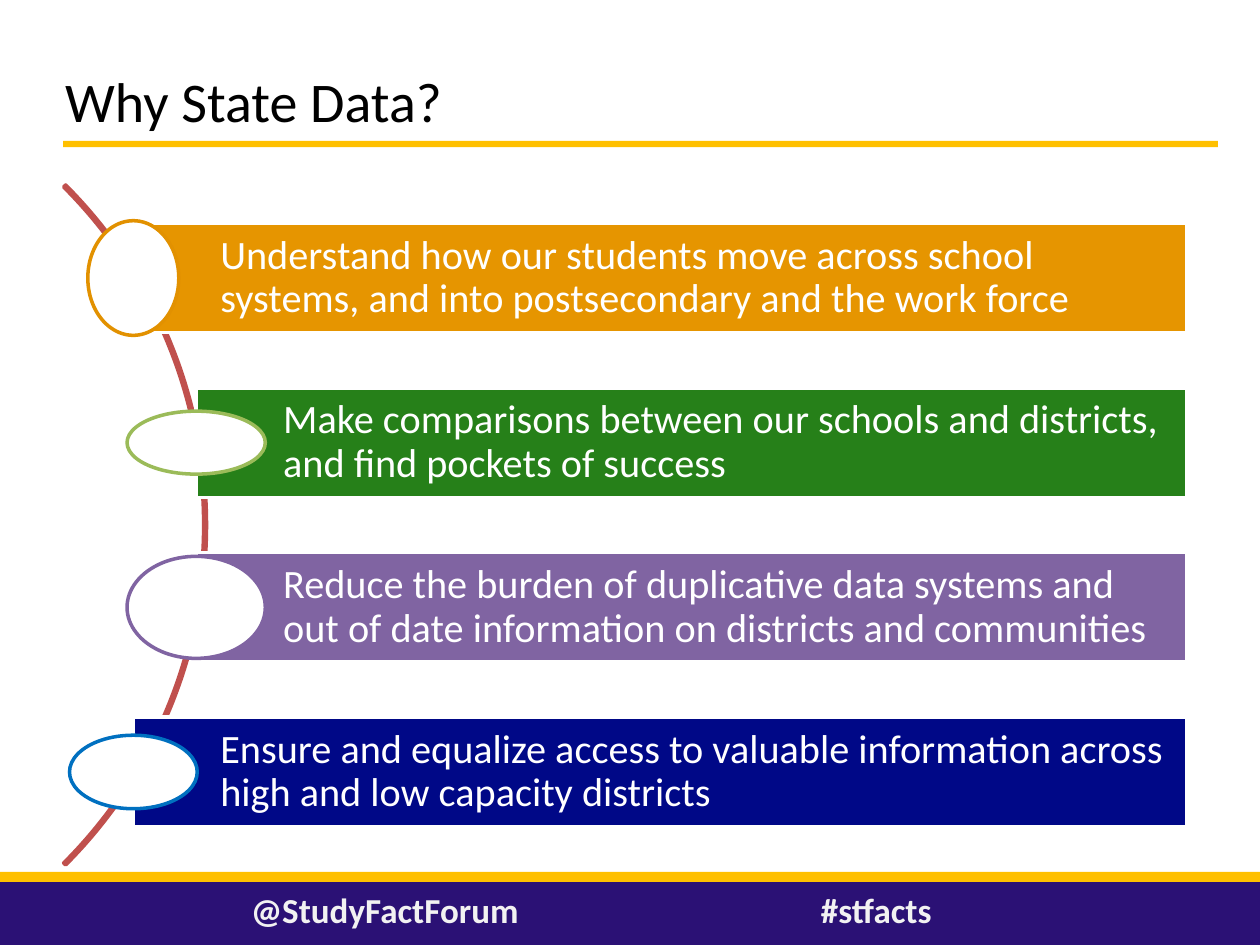
import pptx
import pptx.util
import pptx.dml.color
import pptx.enum.shapes
import pptx.enum.text

Pt = pptx.util.Pt
SHAPES = pptx.enum.shapes.MSO_SHAPE
ANCHOR = pptx.enum.text.MSO_ANCHOR
ALIGN = pptx.enum.text.PP_ALIGN
AUTO_SIZE = pptx.enum.text.MSO_AUTO_SIZE

WHITE, GOLD, PURPLE = "FFFFFF", "FFC000", "2B1175"

REASONS = [
    ("Understand how our students move across school systems, "
     "and into postsecondary and the work force", 76.2, "E69500", (52, 65.5), "E29100"),
    ("Make comparisons between our schools and districts, "
     "and find pockets of success", 112.1, "268019", (79, 36), "9BBB59"),
    ("Reduce the burden of duplicative data systems and "
     "out of date information on districts and communities", 112.1, "8064A2", (79, 58.3), "8064A2"),
    ("Ensure and equalize access to valuable information "
     "across high and low capacity districts", 76.2, "000887", (73, 42), "0070C0"),
]


def color(hex_value):
    return pptx.dml.color.RGBColor.from_string(hex_value)


def add_shape(page, kind, box, fill=None, line=None):
    shape = page.shapes.add_shape(kind, *(Pt(length) for length in box))
    shape.shadow.inherit = False
    if fill:
        shape.fill.solid()
        shape.fill.fore_color.rgb = color(fill)
    else:
        shape.fill.background()
    if line:
        shape.line.color.rgb = color(line)
        shape.line.width = Pt(2)
    else:
        shape.line.fill.background()
    return shape


def write(para, text, size, hex_value, bold=False):
    para.alignment = ALIGN.LEFT
    span = para.add_run()
    span.text = text
    span.font.name = "Calibri"
    span.font.size = Pt(size)
    span.font.bold = bold
    span.font.color.rgb = color(hex_value)


def add_title(page, box):
    left, top, width, height = box
    title = page.shapes.title
    title.left, title.top, title.width, title.height = (Pt(length) for length in box)
    frame = title.text_frame
    frame.auto_size = AUTO_SIZE.NONE
    frame.vertical_anchor = ANCHOR.MIDDLE
    write(frame.paragraphs[0], "Why State Data?", 32, "000000")
    add_shape(page, SHAPES.RECTANGLE, (left + 6, top + 68.5, width - 1, 3.6), GOLD)


def add_footer(page, box):
    left, top, width, height = box
    add_shape(page, SHAPES.RECTANGLE, (left, top + 3.6, width, height - 3.6), PURPLE)
    add_shape(page, SHAPES.RECTANGLE, (left, top, width, 5.8), GOLD)
    for text, offset, label_width in (("#stfacts", 462, 83), ("@StudyFactForum", 136.2, 175.5)):
        label = page.shapes.add_textbox(Pt(left + offset), Pt(top + 5.8), Pt(label_width), Pt(31.5))
        frame = label.text_frame
        frame.word_wrap = False
        frame.auto_size = AUTO_SIZE.SHAPE_TO_FIT_TEXT
        write(frame.paragraphs[0], text, 20, "F2F2F2", bold=True)


def add_reasons(page, box):
    left, top, width, height = box
    diameter = 549.5
    arc = add_shape(page, SHAPES.BLOCK_ARC,
                    (left + 81.5 - diameter, top + height / 2 - diameter / 2, diameter, diameter),
                    line="C0504D")
    for index, value in enumerate((189, 27, 0.003)):
        arc.adjustments[index] = value

    bar_height, pitch = 62.6, 94.1
    first = top + (height - 3 * pitch - bar_height) / 2
    for index, (text, bar_left, fill, (oval_width, oval_height), line) in enumerate(REASONS):
        bar_top = first + index * pitch
        bar = add_shape(page, SHAPES.RECTANGLE,
                        (bar_left, bar_top, left + width - bar_left, bar_height), fill, WHITE)
        frame = bar.text_frame
        frame.word_wrap = True
        frame.vertical_anchor = ANCHOR.MIDDLE
        frame.margin_left = Pt(49.7)
        frame.margin_top = frame.margin_right = frame.margin_bottom = Pt(4.3)
        para = frame.paragraphs[0]
        para.line_spacing = 0.9
        write(para, text, 23, WHITE)
        add_shape(page, SHAPES.OVAL,
                  (bar_left - oval_width / 2, bar_top + (bar_height - oval_height) / 2,
                   oval_width, oval_height), WHITE, line)


def main():
    deck = pptx.Presentation()
    deck.slide_width, deck.slide_height = Pt(720), Pt(540)
    page = deck.slides.add_slide(deck.slide_layouts[5])
    add_title(page, (30, 12, 661, 90))
    add_footer(page, (0, 498.2, 720, 41.8))
    add_reasons(page, (36.5, 106, 641.7, 388))
    deck.save("out.pptx")


if __name__ == "__main__":
    main()
